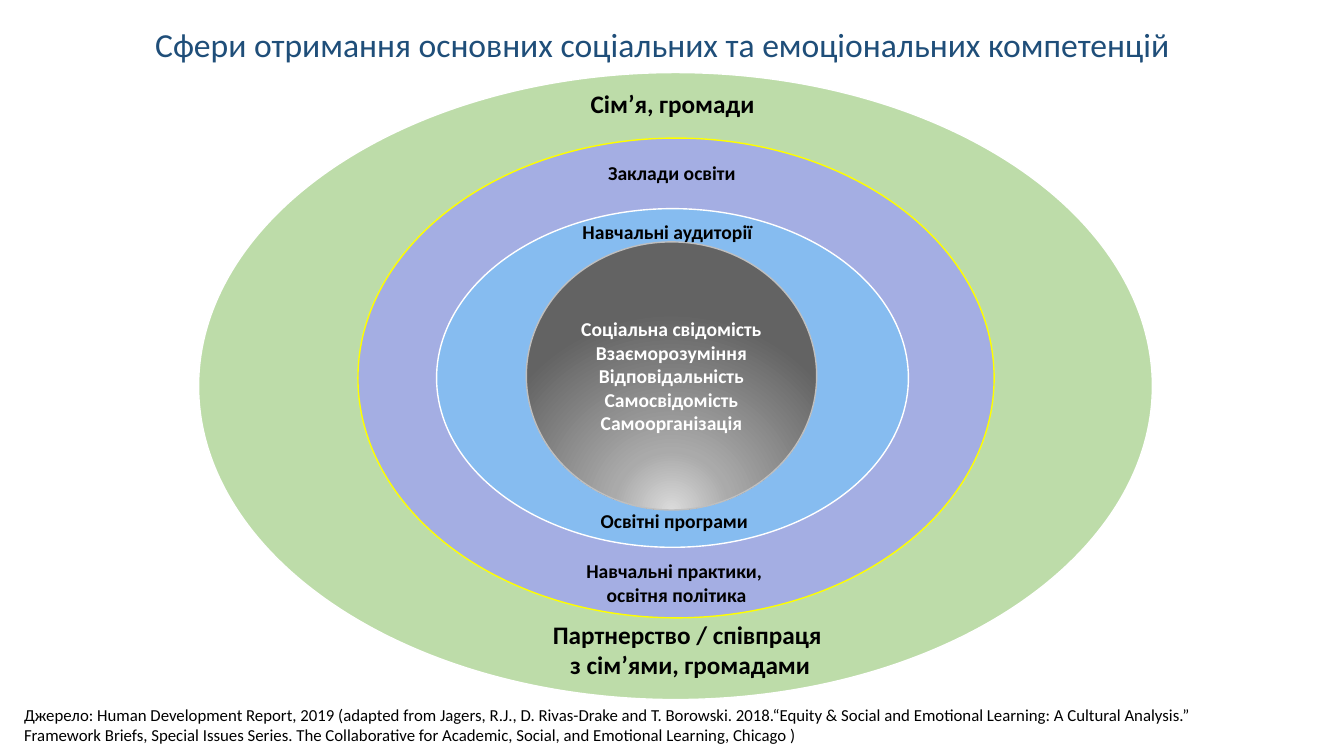
from pptx import Presentation
from pptx.dml.color import RGBColor
from pptx.enum.shapes import MSO_SHAPE as Kind
from pptx.enum.text import MSO_ANCHOR as Anchor, MSO_AUTO_SIZE as Auto, PP_ALIGN as Align
from pptx.oxml import parse_xml
from pptx.oxml.ns import nsdecls, qn
from pptx.util import Inches, Pt
from lxml import etree

BLACK = RGBColor(0x00, 0x00, 0x00)
WHITE = RGBColor(0xFF, 0xFF, 0xFF)
NAVY = RGBColor(0x1F, 0x4E, 0x79)
GREEN = RGBColor(0xA9, 0xD1, 0x8E)
VIOLET = RGBColor(0x99, 0x99, 0xFF)
BLUE = RGBColor(0x66, 0xCC, 0xFF)
YELLOW = RGBColor(0xFF, 0xFF, 0x00)
SILVER = RGBColor(0xBF, 0xBF, 0xBF)
GREY = RGBColor(0x63, 0x63, 0x63)

deck = Presentation()
deck.slide_width, deck.slide_height = Inches(13.33), Inches(7.5)
slide = deck.slides.add_slide(deck.slide_layouts[6])


def write(frame, text, size=14, color=BLACK, bold=True, align=Align.CENTER):
    for i, line in enumerate(text.split("\n")):
        para = frame.paragraphs[0] if i == 0 else frame.add_paragraph()
        para.alignment = align
        run = para.add_run()
        run.text = line
        run.font.name = "Calibri"
        run.font.size = Pt(size)
        run.font.bold = bold
        run.font.color.rgb = color


rings = [
    (1.97, 0.72, 9.46, 6.22, GREEN, 76, WHITE),
    (3.55, 1.37, 6.31, 4.76, VIOLET, 68, YELLOW),
    (4.33, 2.07, 4.68, 3.36, BLUE, 48, WHITE),
    (5.22, 2.4, 2.88, 2.66, GREY, 100, SILVER),
]
for left, top, width, height, color, alpha, edge in rings:
    ring = slide.shapes.add_shape(
        Kind.OVAL, Inches(left), Inches(top), Inches(width), Inches(height))
    ring.shadow.inherit = False
    ring.fill.solid()
    ring.fill.fore_color.rgb = color
    ring.line.color.rgb = edge
    ring.line.width = Pt(1)
    if alpha < 100:
        tint = ring.element.spPr.find(qn("a:solidFill"))[0]
        etree.SubElement(tint, qn("a:alpha")).set("val", str(alpha * 1000))

core = ring
stops = "".join(
    f'<a:gs pos="{pos * 1000}"><a:srgbClr val="{shade}"/></a:gs>'
    for pos, shade in [(0, "DBDBDB"), (30, "AAAAAA"), (100, GREY)])
glow = parse_xml(
    f'<a:gradFill {nsdecls("a")} rotWithShape="1"><a:gsLst>{stops}</a:gsLst>'
    '<a:path path="circle"><a:fillToRect l="50000" t="130000" r="50000" b="-30000"/>'
    '</a:path></a:gradFill>')
props = core.element.spPr
props.replace(props.find(qn("a:solidFill")), glow)
core.text_frame.vertical_anchor = Anchor.MIDDLE
write(core.text_frame,
      "Соціальна свідомість\nВзаєморозуміння\nВідповідальність\n"
      "Самосвідомість\nСамоорганізація", color=WHITE)

plain = dict(bold=False, align=Align.LEFT)
source = (
    "Джерело: Human Development Report, 2019 (adapted from Jagers, R.J., "
    "D. Rivas-Drake and T. Borowski. 2018.“Equity & Social and Emotional Learning: "
    "A Cultural Analysis.” Framework Briefs, Special Issues Series. The Collaborative "
    "for Academic, Social, and Emotional Learning, Chicago )")
title = "Сфери отримання основних соціальних та емоціональних компетенцій"
labels = [
    (0.14, 6.94, 11.87, 0.5, source, dict(size=12, **plain)),
    (1.44, 0.19, 10.36, 0.5, title, dict(size=24, color=NAVY, **plain)),
    (5.67, 2.13, 1.9, 0.34, "Навчальні аудиторії", {}),
    (5.85, 5, 1.72, 0.34, "Освітні програми ", {}),
    (5.93, 1.55, 1.47, 0.34, "Заклади освіти", {}),
    (5.75, 0.83, 1.84, 0.4, "Сім’я, громади", dict(size=18)),
    (5.37, 6.09, 2.95, 0.71, "Партнерство / співпраця \nз сім’ями, громадами", dict(size=18)),
    (5.71, 5.5, 2, 0.57, "Навчальні практики, \nосвітня політика", {}),
]
for left, top, width, height, text, form in labels:
    box = slide.shapes.add_textbox(
        Inches(left), Inches(top), Inches(width), Inches(height))
    box.text_frame.word_wrap = text == source
    box.text_frame.auto_size = Auto.SHAPE_TO_FIT_TEXT
    write(box.text_frame, text, **form)

deck.save("out.pptx")
